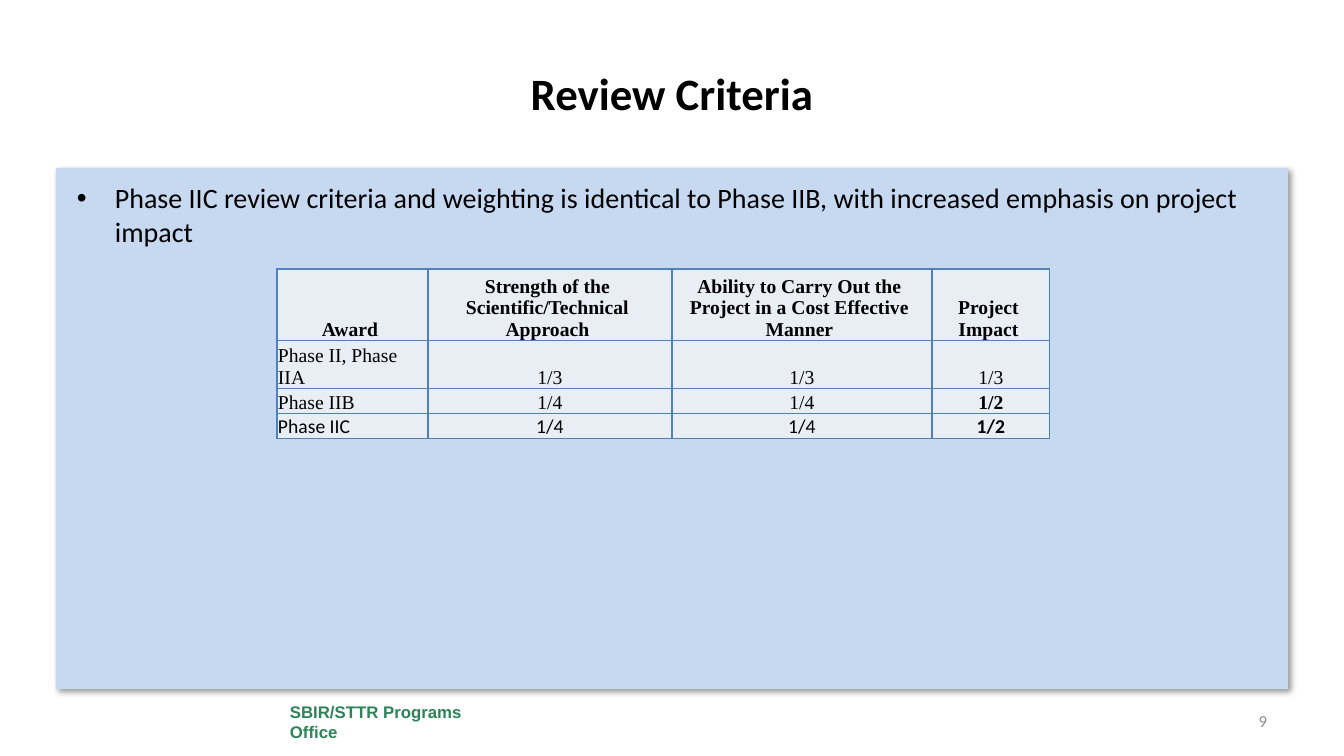
from lxml import etree
from pptx import Presentation, util as u
from pptx.dml.color import RGBColor
from pptx.enum import shapes, text
from pptx.oxml import parse_xml
from pptx.oxml.ns import nsdecls, qn

PX = u.Inches(1) / 100.8
SLIDE_SIZE = (1344, 756)
LEFT, CENTER, RIGHT = text.PP_ALIGN.LEFT, text.PP_ALIGN.CENTER, text.PP_ALIGN.RIGHT
TOP, MIDDLE, BOTTOM = text.MSO_ANCHOR.TOP, text.MSO_ANCHOR.MIDDLE, text.MSO_ANCHOR.BOTTOM

PANEL = {"box": (56, 168, 1232, 521), "fill": "C6D9F1"}
FOOTER = {"box": (280, 698, 213, 48), "fill": "FFFFFF", "words": "SBIR/STTR Programs Office",
          "font": {"size": 12, "name": "Arial", "bold": True, "color": "2C8458"}}
TITLE = {"box": (67, 30, 1210, 126), "words": "Review Criteria", "align": CENTER, "anchor": MIDDLE,
         "font": {"size": 32, "name": "Calibri", "bold": True, "color": "000000"}}
BULLET = {"box": (67, 176, 1210, 499), "align": LEFT, "anchor": TOP, "indent": 38,
          "words": "Phase IIC review criteria and weighting is identical to Phase IIB, "
                   "with increased emphasis on project impact",
          "font": {"size": 20, "name": "Calibri", "bold": False, "color": "000000"}}
NUMBER = {"box": (1064, 701, 213, 40), "words": "9", "align": RIGHT, "anchor": MIDDLE,
          "font": {"size": 12, "name": "Calibri", "bold": False, "color": "8C8C8C"}}

CRITERIA = [
    ("Award", "Strength of the Scientific/Technical Approach",
     "Ability to Carry Out the Project in a Cost Effective Manner", "Project Impact"),
    ("Phase II, Phase IIA", "1/3", "1/3", "1/3"),
    ("Phase IIB", "1/4", "1/4", "1/2"),
    ("Phase IIC", "1/4", "1/4", "1/2"),
]
TABLE_ORIGIN = (277, 269)
COLUMN_WIDTHS = (151, 244, 260, 118)
ROW_HEIGHTS = (66, 45, 22, 25)
CELL_FILL, BORDER_COLOR = "E9EDF4", "4F81BD"
HEADER_RIGHT_MARGIN = 6


def px(length):
    return u.Emu(round(length * PX))


def rgb(color):
    return RGBColor.from_string(color)


def write(frame, words, font, align=LEFT, anchor=MIDDLE, indent=0):
    """Put one formatted paragraph in a text frame, bulleted when indented."""
    frame.word_wrap = True
    frame.vertical_anchor = anchor
    paragraph = frame.paragraphs[0]
    paragraph.text = words
    paragraph.alignment = align
    if indent:
        properties = paragraph._p.get_or_add_pPr()
        properties.set("marL", str(px(indent)))
        properties.set("indent", str(-px(indent)))
        etree.SubElement(properties, qn("a:buFont")).set("typeface", "Arial")
        etree.SubElement(properties, qn("a:buChar")).set("char", "•")
    values = {"size": u.Pt(font["size"]), "name": font["name"], "bold": font["bold"]}
    for run in paragraph.runs:
        for name, value in values.items():
            setattr(run.font, name, value)
        run.font.color.rgb = rgb(font["color"])


def add_rectangle(slide, box, fill):
    shape = slide.shapes.add_shape(shapes.MSO_SHAPE.RECTANGLE, *map(px, box))
    shape.shadow.inherit = False
    shape.fill.solid()
    shape.fill.fore_color.rgb = rgb(fill)
    shape.line.fill.background()
    return shape


def cast_shadow(shape):
    effects = shape._element.spPr.find(qn("a:effectLst"))
    effects.append(parse_xml(
        f'<a:outerShdw {nsdecls("a")} blurRad="{u.Pt(4)}" dist="{u.Pt(3)}" dir="2700000" '
        'algn="tl" rotWithShape="0"><a:srgbClr val="000000"><a:alpha val="40000"/>'
        '</a:srgbClr></a:outerShdw>'))


def add_text(slide, box, **content):
    write(slide.shapes.add_textbox(*map(px, box)).text_frame, **content)


def outline_cell(cell):
    properties = cell._tc.get_or_add_tcPr()
    for side in "LRTB":
        properties.append(parse_xml(
            f'<a:ln{side} {nsdecls("a")} w="{u.Pt(1)}"><a:solidFill>'
            f'<a:srgbClr val="{BORDER_COLOR}"/></a:solidFill></a:ln{side}>'))


def add_criteria_table(slide):
    size = (sum(COLUMN_WIDTHS), sum(ROW_HEIGHTS))
    table = slide.shapes.add_table(len(CRITERIA), len(COLUMN_WIDTHS),
                                   *map(px, TABLE_ORIGIN + size)).table
    table.first_row = table.horz_banding = False
    for column, width in zip(table.columns, COLUMN_WIDTHS):
        column.width = px(width)
    for row, height in zip(table.rows, ROW_HEIGHTS):
        row.height = px(height)
    for r, values in enumerate(CRITERIA):
        for c, words in enumerate(values):
            cell = table.cell(r, c)
            margins = {"margin_left": 1, "margin_top": 1, "margin_bottom": 0,
                       "margin_right": 1 if r else HEADER_RIGHT_MARGIN}
            for name, value in margins.items():
                setattr(cell, name, px(value))
            font = {"size": 14, "color": "000000", "bold": r == 0 or words == "1/2",
                    "name": "Calibri" if values[0] == "Phase IIC" else "Times New Roman"}
            write(cell.text_frame, words, font, LEFT if r and c == 0 else CENTER)
            cell.vertical_anchor = BOTTOM
            outline_cell(cell)
            cell.fill.solid()
            cell.fill.fore_color.rgb = rgb(CELL_FILL)


def main():
    presentation = Presentation()
    presentation.slide_width, presentation.slide_height = map(px, SLIDE_SIZE)
    slide = presentation.slides.add_slide(presentation.slide_layouts[6])
    cast_shadow(add_rectangle(slide, **PANEL))
    footer = add_rectangle(slide, FOOTER["box"], FOOTER["fill"])
    write(footer.text_frame, FOOTER["words"], FOOTER["font"])
    for content in (TITLE, BULLET, NUMBER):
        add_text(slide, **content)
    add_criteria_table(slide)
    presentation.save("out.pptx")


if __name__ == "__main__":
    main()
